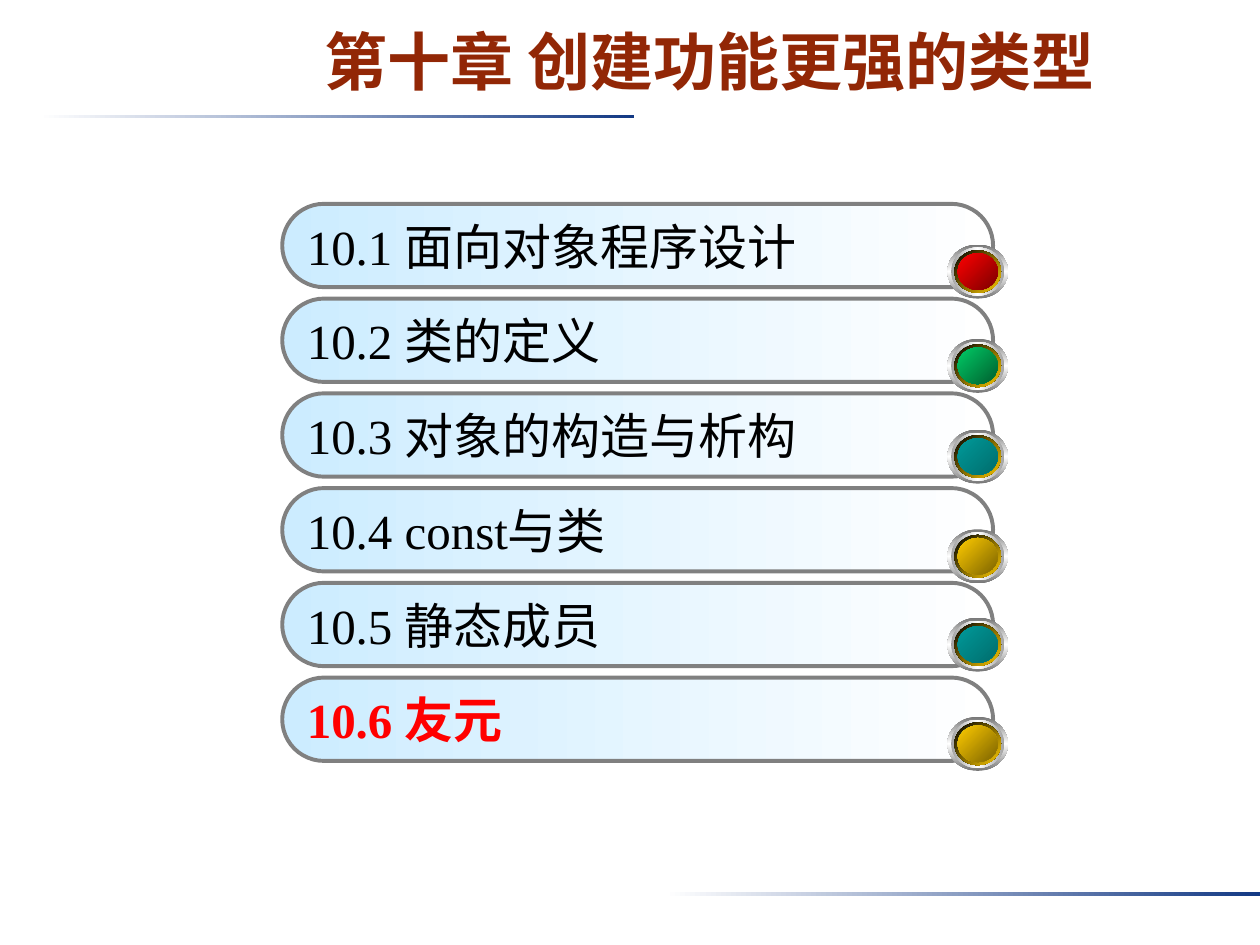
from dataclasses import dataclass

import lxml.etree
import pptx
import pptx.dml.color
import pptx.enum.shapes
import pptx.enum.text
import pptx.oxml.ns
import pptx.util

Cm = pptx.util.Cm
RGBColor = pptx.dml.color.RGBColor
Shapes = pptx.enum.shapes.MSO_SHAPE
qn = pptx.oxml.ns.qn

WHITE = RGBColor(0xFF, 0xFF, 0xFF)
BLACK = RGBColor(0x00, 0x00, 0x00)
NAVY = RGBColor(0x13, 0x39, 0x84)
BROWN = RGBColor(0x92, 0x27, 0x06)
ICE = RGBColor(0xCC, 0xEC, 0xFF)
GRAY = RGBColor(0x80, 0x80, 0x80)
STEEL = RGBColor(0x76, 0x76, 0x76)
SILVER = RGBColor(0xA2, 0xA2, 0xA2)
RED = RGBColor(0xFF, 0x00, 0x00)
DARK_RED = RGBColor(0x7C, 0x00, 0x00)
GREEN = RGBColor(0x00, 0xCC, 0x66)
DARK_GREEN = RGBColor(0x00, 0x5E, 0x2F)
TEAL = RGBColor(0x00, 0x99, 0x99)
MID_TEAL = RGBColor(0x00, 0x75, 0x75)
DARK_TEAL = RGBColor(0x00, 0x6D, 0x6D)
GOLD = RGBColor(0xFF, 0xCC, 0x00)
DARK_GOLD = RGBColor(0x7C, 0x63, 0x00)

BAR_LEFT, BAR_TOP, BAR_WIDTH, BAR_HEIGHT = 5.69, 4.11, 14.33, 1.68
BAR_PITCH = 1.91
BADGE_LEFT, BADGE_WIDTH, BADGE_HEIGHT = 19.1, 1.22, 1.09


@dataclass(frozen=True)
class Gradient:
    colors: tuple[RGBColor, ...]
    angle: int = 0


@dataclass(frozen=True)
class Ring:
    width: float
    height: float
    gradient: Gradient


@dataclass(frozen=True)
class Section:
    title: str
    badge_top: float
    badge_colors: tuple[RGBColor, RGBColor]
    current: bool = False


RINGS = (
    Ring(BADGE_WIDTH, BADGE_HEIGHT, Gradient((STEEL, WHITE, STEEL), 90)),
    Ring(1.07, 0.97, Gradient((SILVER, WHITE, SILVER))),
    Ring(0.94, 0.86, Gradient((WHITE, TEAL, WHITE), 45)),
    Ring(0.94, 0.86, Gradient((BLACK, GOLD), 45)),
    Ring(0.81, 0.74, Gradient((MID_TEAL, TEAL, MID_TEAL), 315)),
)

SECTIONS = (
    Section("10.1 面向对象程序设计", 4.93, (RED, DARK_RED)),
    Section("10.2 类的定义", 6.83, (GREEN, DARK_GREEN)),
    Section("10.3 对象的构造与析构", 8.66, (TEAL, DARK_TEAL)),
    Section("10.4 const与类", 10.67, (GOLD, DARK_GOLD)),
    Section("10.5 静态成员", 12.45, (TEAL, DARK_TEAL)),
    Section("10.6 友元", 14.45, (GOLD, DARK_GOLD), current=True),
)


def add_gradient_shape(shapes, kind, left: float, top: float, width: float,
                       height: float, gradient: Gradient):
    shape = shapes.add_shape(kind, Cm(left), Cm(top), Cm(width), Cm(height))
    shape.shadow.inherit = False
    shape.line.fill.background()
    shape.fill.gradient()
    fill = shape._element.spPr.find(qn("a:gradFill"))
    for child in list(fill):
        fill.remove(child)
    stops = lxml.etree.SubElement(fill, qn("a:gsLst"))
    for index, color in enumerate(gradient.colors):
        position = 100000 * index // (len(gradient.colors) - 1)
        stop = lxml.etree.SubElement(stops, qn("a:gs"), pos=str(position))
        lxml.etree.SubElement(stop, qn("a:srgbClr"), val=str(color))
    lxml.etree.SubElement(fill, qn("a:lin"), ang=str(gradient.angle * 60000), scaled="0")
    return shape


def format_text(paragraph, font_name: str, size: int, color: RGBColor, bold: bool) -> None:
    for run in paragraph.runs:
        run.font.name = font_name
        run.font.size = pptx.util.Pt(size)
        run.font.color.rgb = color
        run.font.bold = bold


def add_title(slide, text: str) -> None:
    text_box = slide.shapes.add_textbox(Cm(3.51), Cm(0.3), Cm(21.59), Cm(2.08))
    text_frame = text_box.text_frame
    text_frame.word_wrap = True
    text_frame.margin_top = Cm(0.15)
    text_frame.text = text
    paragraph = text_frame.paragraphs[0]
    paragraph.alignment = pptx.enum.text.PP_ALIGN.CENTER
    properties = paragraph._p.get_or_add_pPr()
    properties.set("marL", str(Cm(2.34)))
    properties.set("indent", str(-Cm(2.34)))
    format_text(paragraph, "Arial", 36, BROWN, True)


def add_bar(slide, section: Section, top: float) -> None:
    bar = add_gradient_shape(slide.shapes, Shapes.ROUNDED_RECTANGLE, BAR_LEFT, top,
                             BAR_WIDTH, BAR_HEIGHT, Gradient((ICE, WHITE)))
    bar.adjustments[0] = 0.5
    bar.line.color.rgb = GRAY
    bar.line.width = pptx.util.Pt(2.25)
    text_frame = bar.text_frame
    text_frame.vertical_anchor = pptx.enum.text.MSO_ANCHOR.MIDDLE
    text_frame.text = section.title
    paragraph = text_frame.paragraphs[0]
    paragraph.alignment = pptx.enum.text.PP_ALIGN.LEFT
    color = RED if section.current else BLACK
    format_text(paragraph, "Times New Roman", 28, color, section.current)


def add_badge(slide, section: Section) -> None:
    group = slide.shapes.add_group_shape()
    center_x = BADGE_LEFT + BADGE_WIDTH / 2
    center_y = section.badge_top + BADGE_HEIGHT / 2
    face = Ring(0.81, 0.74, Gradient(section.badge_colors, 45))
    for ring in (*RINGS, face):
        add_gradient_shape(group.shapes, Shapes.OVAL, center_x - ring.width / 2,
                           center_y - ring.height / 2, ring.width, ring.height,
                           ring.gradient)


def main() -> None:
    presentation = pptx.Presentation()
    presentation.slide_width = Cm(25.4)
    presentation.slide_height = Cm(19.05)
    slide = presentation.slides.add_slide(presentation.slide_layouts[6])
    for left, top in ((0.79, 2.31), (13.41, 17.98)):
        add_gradient_shape(slide.shapes, Shapes.RECTANGLE, left, top, 11.99, 0.08,
                           Gradient((WHITE, NAVY)))
    add_title(slide, "第十章 创建功能更强的类型")
    for index, section in enumerate(SECTIONS):
        add_bar(slide, section, BAR_TOP + index * BAR_PITCH)
        add_badge(slide, section)
    presentation.save("out.pptx")


if __name__ == "__main__":
    main()
